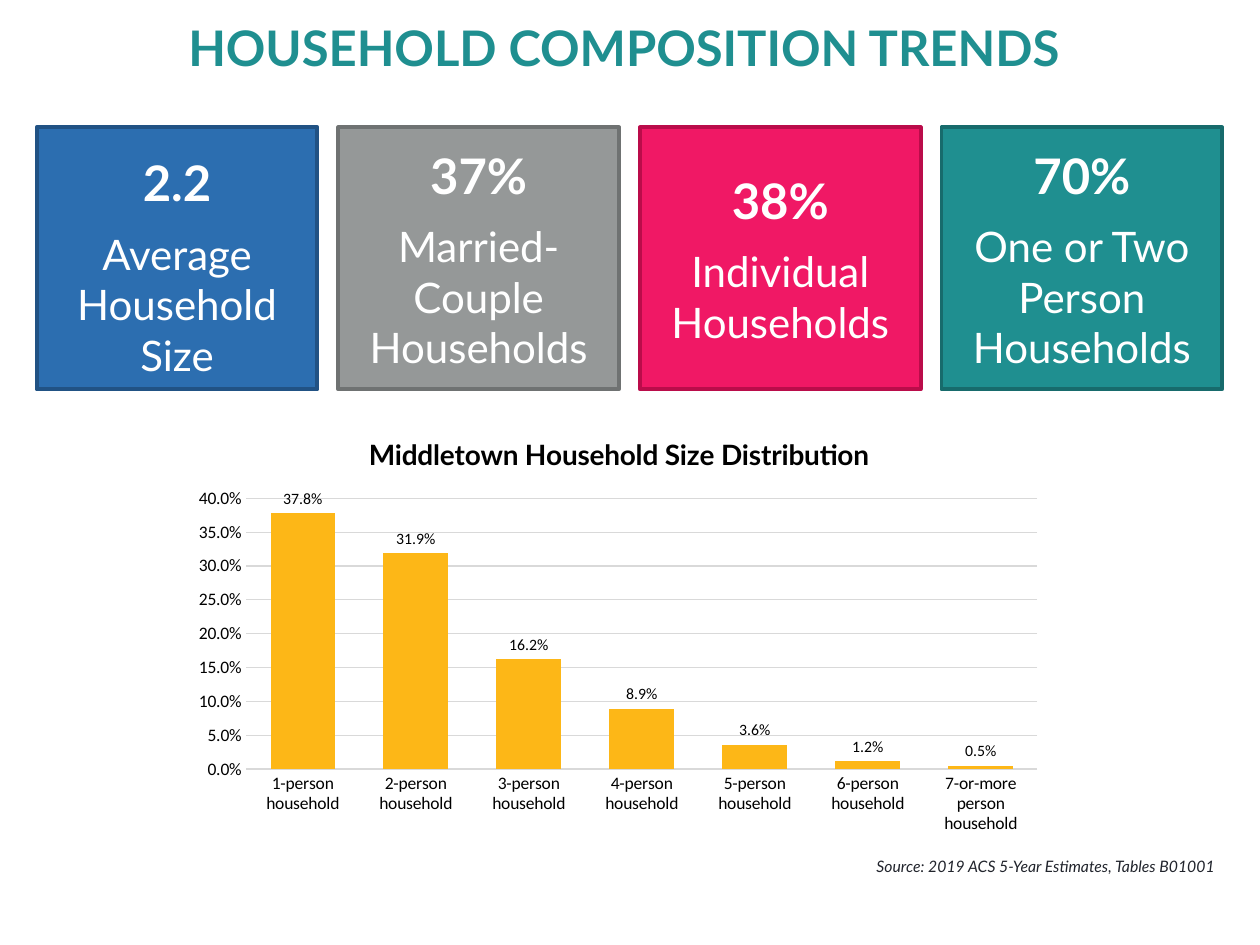
from lxml import etree
from pptx import Presentation
from pptx.chart.data import CategoryChartData
from pptx.dml.color import RGBColor
from pptx.enum.chart import XL_CHART_TYPE, XL_LABEL_POSITION, XL_TICK_MARK
from pptx.enum.shapes import MSO_SHAPE
from pptx.enum.text import MSO_ANCHOR, PP_ALIGN
from pptx.oxml.ns import qn
from pptx.util import Cm, Pt

COLUMN = XL_CHART_TYPE.COLUMN_CLUSTERED
OUTSIDE = XL_LABEL_POSITION.OUTSIDE_END
NO_TICK = XL_TICK_MARK.NONE
RECT = MSO_SHAPE.RECTANGLE
MIDDLE = MSO_ANCHOR.MIDDLE
CENTER = PP_ALIGN.CENTER

CARDS = [
    ("2.2", "Average Household Size", "2C6EB0", "215284", 0.3),
    ("37%", "Married- Couple Households", "959898", "6F7272", 0),
    ("38%", "Individual Households", "F01865", "BA0C4A", 0),
    ("70%", "One or Two Person Households", "1F8F90", "176B6C", 0),
]
SIZES = {
    "1-person household": 0.378,
    "2-person household": 0.319,
    "3-person household": 0.162,
    "4-person household": 0.089,
    "5-person household": 0.036,
    "6-person household": 0.012,
    "7-or-more person household": 0.005,
}
PLOT = {"x": 0.073, "y": 0.196, "w": 0.906, "h": 0.634}


def rgb(value):
    return RGBColor.from_string(value)


def set_font(font, color, **values):
    for name, value in values.items():
        setattr(font, name, value)
    font.color.rgb = rgb(color)


def write(p, text, color, **values):
    r = p.add_run()
    r.text = text
    set_font(r.font, color, **values)


def add_title(s, left, top, width, height):
    sp = s.shapes.title
    sp.left, sp.top, sp.width, sp.height = Cm(left), Cm(top), Cm(width), Cm(height)
    tf = sp.text_frame
    tf.vertical_anchor = MIDDLE
    p = tf.paragraphs[0]
    p.alignment, p.line_spacing = CENTER, 0.9
    write(p, "HOUSEHOLD COMPOSITION TRENDS", "1F8F90",
          name="Lato", size=Pt(28), bold=True)


def add_card(s, left, top, width, height, figure, label, fill, line, drop):
    sp = s.shapes.add_shape(RECT, Cm(left), Cm(top), Cm(width), Cm(height))
    sp.shadow.inherit = False
    sp.fill.solid()
    sp.fill.fore_color.rgb = rgb(fill)
    sp.line.color.rgb = rgb(line)
    sp.line.width = Pt(2.25)
    tf = sp.text_frame
    tf.word_wrap = True
    tf.vertical_anchor = MIDDLE
    tf.margin_top = Cm(0.13 + drop)
    p = tf.paragraphs[0]
    p.alignment = CENTER
    write(p, figure, "FFFFFF", name="Lato", size=Pt(28), bold=True)
    p = tf.add_paragraph()
    p.alignment, p.space_before = CENTER, Pt(9.6)
    write(p, label, "FFFFFF", name="Lato", size=Pt(24), bold=False)


def add_cards(s, left, top, width, height):
    card_width = 5.66
    pitch = (width - card_width) / (len(CARDS) - 1)
    for i, card in enumerate(CARDS):
        add_card(s, left + i * pitch, top, card_width, height, *card)


def place_plot(chart):
    area = chart.plots[0]._element.getparent()
    for old in area.findall(qn("c:layout")):
        area.remove(old)
    layout = etree.Element(qn("c:layout"))
    manual = etree.SubElement(layout, qn("c:manualLayout"))
    settings = {"layoutTarget": "inner", "xMode": "edge", "yMode": "edge", **PLOT}
    for tag, value in settings.items():
        etree.SubElement(manual, qn("c:" + tag)).set("val", str(value))
    area.insert(0, layout)


def add_size_chart(s, left, top, width, height):
    data = CategoryChartData(number_format="0.0%")
    data.categories = list(SIZES)
    data.add_series("Series 1", list(SIZES.values()))
    chart = s.shapes.add_chart(
        COLUMN, Cm(left), Cm(top), Cm(width), Cm(height), data).chart
    set_font(chart.font, "000000", name="Calibri", size=Pt(10))
    chart.has_legend = False
    chart.has_title = True
    write(chart.chart_title.text_frame.paragraphs[0],
          "Middletown Household Size Distribution", "000000",
          name="Lato", size=Pt(16), bold=True)
    chart.chart_title.include_in_layout = False

    for axis in (chart.category_axis, chart.value_axis):
        axis.major_tick_mark = axis.minor_tick_mark = NO_TICK
        set_font(axis.tick_labels.font, "000000", name="Calibri", size=Pt(10))
    values = chart.value_axis
    values.minimum_scale, values.maximum_scale, values.major_unit = 0, 0.4, 0.05
    values.tick_labels.number_format = "0.0%"
    values.tick_labels.number_format_is_linked = False
    values.format.line.fill.background()
    for line in (chart.category_axis.format.line, values.major_gridlines.format.line):
        line.color.rgb = rgb("D9D9D9")
        line.width = Pt(0.75)

    plot = chart.plots[0]
    plot.gap_width, plot.overlap, plot.vary_by_categories = 75, -27, False
    fill = plot.series[0].format.fill
    fill.solid()
    fill.fore_color.rgb = rgb("FDB717")
    plot.has_data_labels = True
    labels = plot.data_labels
    settings = {"show_value": True, "number_format": "0.0%",
                "number_format_is_linked": False, "position": OUTSIDE}
    for name, value in settings.items():
        setattr(labels, name, value)
    set_font(labels.font, "000000", name="Calibri", size=Pt(9))
    place_plot(chart)


def add_source(s, left, top, width, height):
    sp = s.shapes.add_textbox(Cm(left), Cm(top), Cm(width), Cm(height))
    tf = sp.text_frame
    tf.word_wrap = True
    write(tf.paragraphs[0], "Source: 2019 ACS 5-Year Estimates, Tables B01001",
          "21242C", name="Lato", size=Pt(9), italic=True)


def main():
    prs = Presentation()
    prs.slide_width, prs.slide_height = Cm(25.4), Cm(19.05)
    s = prs.slides.add_slide(prs.slide_layouts[5])
    add_title(s, 1.6, 0.18, 21.95, 1.7)
    add_cards(s, 0.74, 2.57, 23.9, 5.28)
    add_size_chart(s, 3.68, 8.36, 17.6, 8.61)
    add_source(s, 17.42, 17.15, 7.72, 0.64)
    prs.save("out.pptx")


if __name__ == "__main__":
    main()
